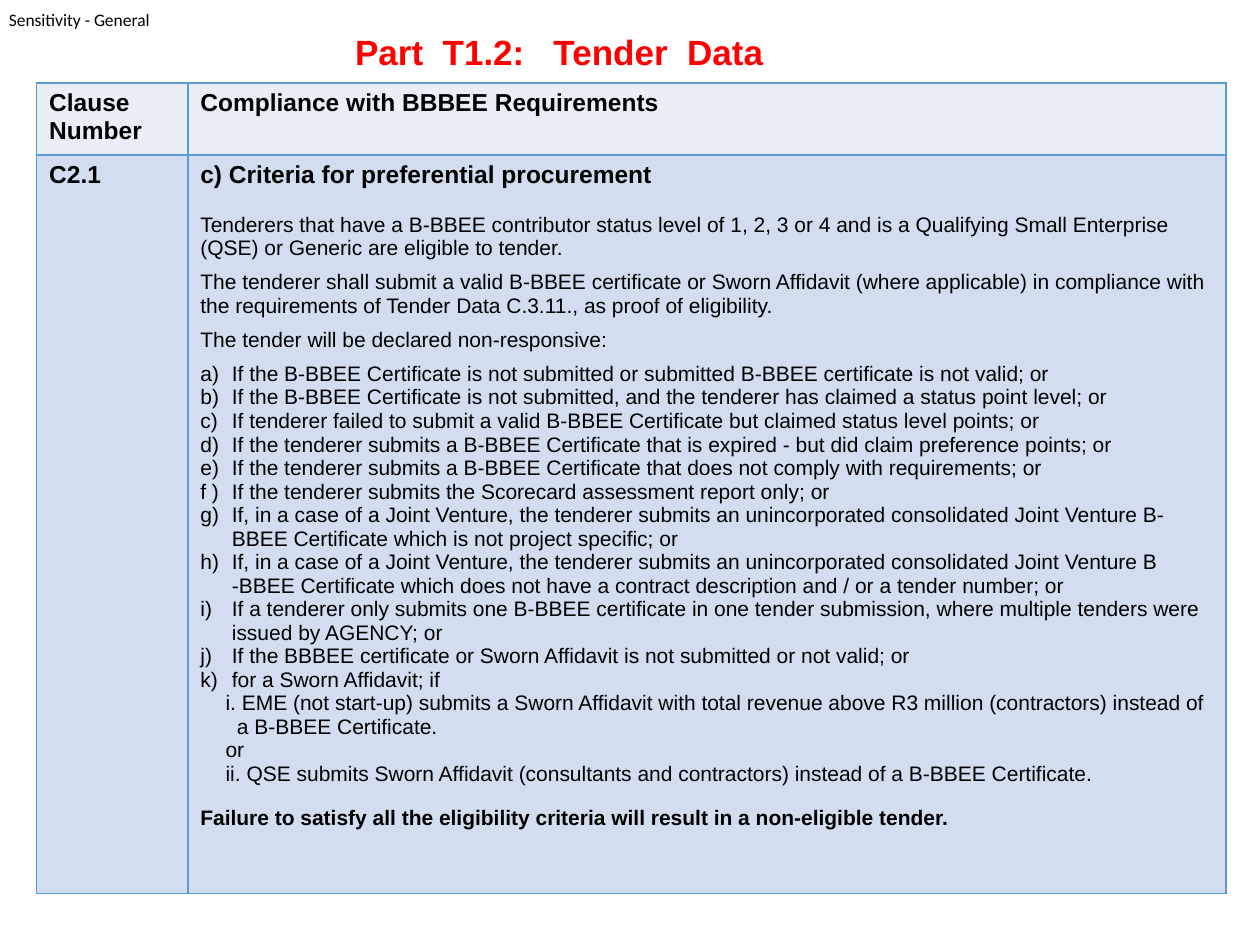
from lxml.etree import SubElement
from pptx import Presentation
from pptx.dml.color import RGBColor
from pptx.enum.text import MSO_ANCHOR, MSO_AUTO_SIZE, PP_ALIGN
from pptx.oxml.ns import qn
from pptx.util import Inches, Pt

BLACK = RGBColor(0x00, 0x00, 0x00)
RED = RGBColor(0xFF, 0x00, 0x00)
HEADER_FILL = RGBColor(0xEA, 0xEF, 0xF7)
BODY_FILL = RGBColor(0xD2, 0xDE, 0xEF)
BORDER = RGBColor(0x5B, 0x9B, 0xD5)

INTRO = [
    "Tenderers that have a B-BBEE contributor status level of 1, 2, 3 or 4 and is a Qualifying Small Enterprise (QSE) or Generic are eligible to tender.",
    "The tenderer shall submit a valid B-BBEE certificate or Sworn Affidavit (where applicable) in compliance with the requirements of Tender Data C.3.11., as proof of eligibility.",
    "The tender will be declared non-responsive:",
]
REASONS = [
    ("a)", "If the B-BBEE Certificate is not submitted or submitted B-BBEE certificate is not valid; or"),
    ("b)", "If the B-BBEE Certificate is not submitted, and the tenderer has claimed a status point level; or"),
    ("c)", "If tenderer failed to submit a valid B-BBEE Certificate but claimed status level points; or"),
    ("d)", "If the tenderer submits a B-BBEE Certificate that is expired - but did claim preference points; or"),
    ("e)", "If the tenderer submits a B-BBEE Certificate that does not comply with requirements; or"),
    ("f )", "If the tenderer submits the Scorecard assessment report only; or"),
    ("", "If, in a case of a Joint Venture, the tenderer submits an unincorporated consolidated Joint Venture B-\vBBEE Certificate which is not project specific; or"),
    ("h)", "If, in a case of a Joint Venture, the tenderer submits an unincorporated consolidated Joint Venture B -BBEE Certificate which does not have a contract description and / or a tender number; or"),
    ("i)", "If a tenderer only submits one B-BBEE certificate in one tender submission, where multiple tenders were issued by AGENCY; or"),
    ("j)", "If the BBBEE certificate or Sworn Affidavit is not submitted or not valid; or"),
    ("k)", "for a Sworn Affidavit; if"),
]
AFFIDAVIT_CASES = [
    "i. EME (not start-up) submits a Sworn Affidavit with total revenue above R3 million (contractors) instead of a B-BBEE Certificate.",
    "or",
    "ii. QSE submits Sworn Affidavit (consultants and contractors) instead of a B-BBEE Certificate.",
]


def add_text(tf, text, size=12, bold=False, color=BLACK, font="Arial", align=None,
             after=0, left=0, hang=0, start=None):
    """Write one formatted paragraph, using the first one while it is empty."""
    p = tf.paragraphs[0] if not tf.text else tf.add_paragraph()
    p.text = text
    pPr = p._p.get_or_add_pPr()
    pPr.set("marL", str(Inches(left)))
    pPr.set("indent", str(-Inches(hang)))
    if start:
        SubElement(pPr, qn("a:buFont"), typeface="+mj-lt")
        SubElement(pPr, qn("a:buAutoNum"), type="alphaLcParenR", startAt=str(start))
    else:
        SubElement(pPr, qn("a:buNone"))
    p.space_before, p.space_after = Pt(0), Pt(after)
    if align is not None:
        p.alignment = align
    for r in p.runs:
        r.font.size, r.font.bold, r.font.name = Pt(size), bold, font
        r.font.color.rgb = color


def add_label(s, x, y, w, h):
    """Place the sensitivity label."""
    tf = s.shapes.add_textbox(x, y, w, h).text_frame
    tf.margin_left = tf.margin_right = tf.margin_top = tf.margin_bottom = 0
    tf.word_wrap = True
    add_text(tf, "Sensitivity - General", size=10, font="Calibri")


def add_title(s, x, y, w, h):
    """Place the slide title in its placeholder."""
    sp = s.shapes.title
    sp.left, sp.top, sp.width, sp.height = x, y, w, h
    tf = sp.text_frame
    tf.word_wrap = False
    tf.auto_size = MSO_AUTO_SIZE.NONE
    tf.vertical_anchor = MSO_ANCHOR.TOP
    add_text(tf, "Part  T1.2:   Tender  Data", size=20, bold=True, color=RED, align=PP_ALIGN.CENTER)


def style_cell(cell, fill):
    """Give a cell its borders and fill."""
    tcPr = cell._tc.get_or_add_tcPr()
    for side in ("lnL", "lnR", "lnT", "lnB"):
        ln = SubElement(tcPr, qn(f"a:{side}"), w=str(Pt(1)))
        SubElement(SubElement(ln, qn("a:solidFill")), qn("a:srgbClr"), val=str(BORDER))
    cell.fill.solid()
    cell.fill.fore_color.rgb = fill


def fill_criteria(tf):
    """Write the preferential procurement criteria."""
    add_text(tf, "c) Criteria for preferential procurement", size=14, bold=True, after=14)
    for text in INTRO:
        add_text(tf, text, after=6)
    for number, (label, text) in enumerate(REASONS, 1):
        if label:
            add_text(tf, f"{label}\t{text}", left=0.25, hang=0.25)
        else:
            add_text(tf, text, left=0.25, hang=0.25, start=number)
    for text in AFFIDAVIT_CASES:
        add_text(tf, text, left=0.29, hang=0.09, after=12 if text == AFFIDAVIT_CASES[-1] else 0)
    add_text(tf, "Failure to satisfy all the eligibility criteria will result in a non-eligible tender.", bold=True)


def add_clause_table(s, x, y, w, h):
    """Place the clause table."""
    table = s.shapes.add_table(2, 2, x, y, w, h).table
    table.horz_banding = False
    table.columns[0].width = Inches(1.2)
    table.columns[1].width = w - Inches(1.2)
    table.rows[0].height = Inches(0.57)
    table.rows[1].height = h - Inches(0.57)
    for row, fill in enumerate((HEADER_FILL, BODY_FILL)):
        for col in range(2):
            style_cell(table.cell(row, col), fill)
    for row, col, text in ((0, 0, "Clause"), (0, 0, "Number"),
                           (0, 1, "Compliance with BBBEE Requirements"), (1, 0, "C2.1")):
        add_text(table.cell(row, col).text_frame, text, size=14, bold=True)
    fill_criteria(table.cell(1, 1).text_frame)


def main():
    """Build and save the slide."""
    prs = Presentation()
    prs.slide_width, prs.slide_height = Inches(10), Inches(7.5)
    s = prs.slides.add_slide(prs.slide_layouts[5])
    add_label(s, Inches(0.07), Inches(0.07), Inches(1.15), Inches(0.17))
    add_title(s, Inches(2.71), Inches(0.19), Inches(3.46), Inches(0.44))
    add_clause_table(s, Inches(0.29), Inches(0.66), Inches(9.44), Inches(6.43))
    prs.save("out.pptx")


if __name__ == "__main__":
    main()
